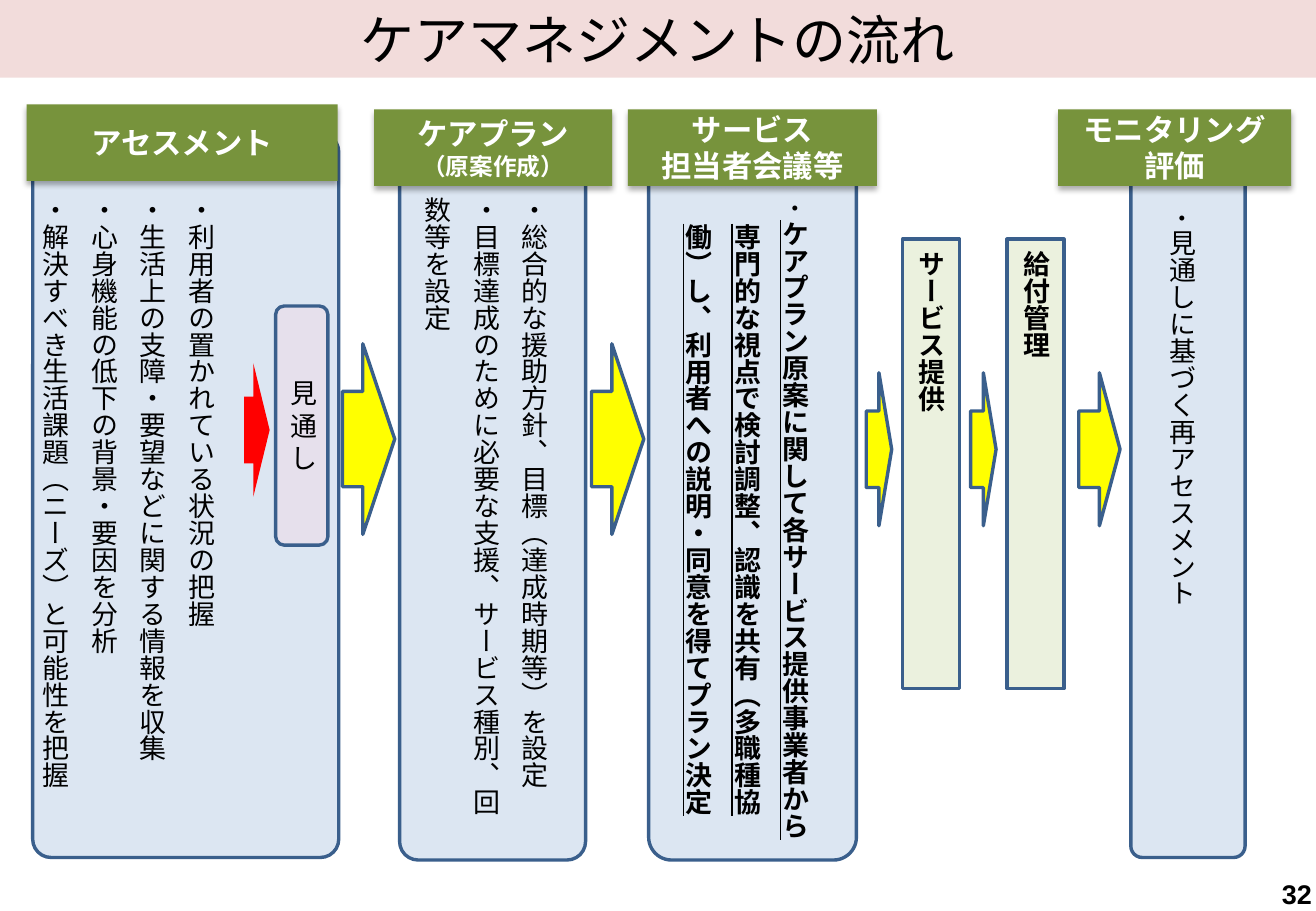
from dataclasses import dataclass
from typing import Optional

from lxml import etree
from pptx import Presentation
from pptx import util as u
from pptx.dml.color import RGBColor
from pptx.enum import shapes, text
from pptx.oxml import ns

GOTHIC, LATIN = "Noto Sans CJK JP", "Arial"
BLACK = RGBColor(0x00, 0x00, 0x00)
WHITE = RGBColor(0xFF, 0xFF, 0xFF)
PINK = RGBColor(0xF2, 0xDC, 0xDB)
PALE_BLUE = RGBColor(0xDC, 0xE6, 0xF2)
PALE_GREEN = RGBColor(0xEB, 0xF1, 0xDE)
LILAC = RGBColor(0xE6, 0xE0, 0xEC)
GREEN = RGBColor(0x77, 0x93, 0x3C)
YELLOW = RGBColor(0xFF, 0xFF, 0x00)
RED = RGBColor(0xFF, 0x00, 0x00)
NAVY = RGBColor(0x3A, 0x5F, 0x8C)

RECT = shapes.MSO_SHAPE.RECTANGLE
ROUND = shapes.MSO_SHAPE.ROUNDED_RECTANGLE
ARROW = shapes.MSO_SHAPE.RIGHT_ARROW
LEFT, CENTER, RIGHT = text.PP_ALIGN.LEFT, text.PP_ALIGN.CENTER, text.PP_ALIGN.RIGHT
MIDDLE, BOTTOM = text.MSO_ANCHOR.MIDDLE, text.MSO_ANCHOR.BOTTOM


@dataclass
class Box:
    left: float
    top: float
    width: float
    height: float


@dataclass
class Run:
    words: str
    size: float = 16
    bold: bool = False
    underline: bool = False
    color: RGBColor = BLACK
    font: str = GOTHIC


@dataclass
class Line:
    runs: list[Run]
    indent: float = 0


@dataclass
class Stage:
    panel: Box
    corner: float
    header: Box
    heading: list[Run]
    body: Box
    lines: list[Line]
    placeholder: int
    spacing: float = 1.5
    anchor: text.MSO_ANCHOR = MIDDLE


def heading(words: str, size: float = 18) -> Run:
    return Run(words, size, bold=True, color=WHITE)


def item(words: str) -> Line:
    return Line([Run(words)])


def agreed(words: str) -> Run:
    return Run(words, bold=True, underline=True)


def place(shape, box: Box) -> None:
    shape.left, shape.top = u.Pt(box.left), u.Pt(box.top)
    shape.width, shape.height = u.Pt(box.width), u.Pt(box.height)


def write(shape, lines: list[Line], align=CENTER, anchor=MIDDLE,
          vertical: bool = False, spacing: float = 1.0) -> None:
    frame = shape.text_frame
    frame.word_wrap = True
    frame.auto_size = text.MSO_AUTO_SIZE.NONE
    frame.vertical_anchor = anchor
    if vertical:
        frame._txBody.bodyPr.set("vert", "eaVert")
    for number, line in enumerate(lines):
        paragraph = frame.add_paragraph() if number else frame.paragraphs[0]
        paragraph.alignment = align
        paragraph.line_spacing = spacing
        paragraph.space_before = u.Pt(0)
        properties = paragraph._p.get_or_add_pPr()
        properties.set("marL", str(u.Pt(line.indent)))
        properties.set("indent", "0")
        etree.SubElement(properties, ns.qn("a:buNone"))
        for part in line.runs:
            run = paragraph.add_run()
            run.text = part.words
            font = run.font
            font.size, font.bold, font.underline = u.Pt(part.size), part.bold, part.underline
            font.color.rgb, font.name = part.color, part.font
            east_asian = etree.SubElement(run._r.get_or_add_rPr(), ns.qn("a:ea"))
            east_asian.set("typeface", part.font)


def draw(slide, kind, box: Box, fill: RGBColor, line: Optional[RGBColor] = NAVY,
         adjust: tuple[float, ...] = ()):
    shape = slide.shapes.add_shape(kind, *(u.Pt(v) for v in (box.left, box.top, box.width, box.height)))
    shape.shadow.inherit = False
    shape.fill.solid()
    shape.fill.fore_color.rgb = fill
    if line is None:
        shape.line.fill.background()
    else:
        shape.line.color.rgb = line
        shape.line.width = u.Pt(2)
    for number, value in enumerate(adjust):
        shape.adjustments[number] = value
    return shape


def drop_shadow(shape) -> None:
    effects = shape.element.spPr.find(ns.qn("a:effectLst"))
    shadow = etree.SubElement(effects, ns.qn("a:outerShdw"), blurRad=str(u.Pt(3.5)),
                              dist=str(u.Pt(2.2)), dir="5400000", rotWithShape="0")
    color = etree.SubElement(shadow, ns.qn("a:srgbClr"), val="000000")
    etree.SubElement(color, ns.qn("a:alpha"), val="32000")


def draw_stage(slide, stage: Stage) -> None:
    draw(slide, ROUND, stage.panel, PALE_BLUE, adjust=(stage.corner,))
    header = draw(slide, RECT, stage.header, GREEN, None)
    drop_shadow(header)
    write(header, [Line([run]) for run in stage.heading])
    body = slide.placeholders[stage.placeholder]
    slide.shapes.element.append(body.element)  # bring in front of its panel
    place(body, stage.body)
    write(body, stage.lines, LEFT, stage.anchor, True, stage.spacing)


STAGES = [
    Stage(Box(19.4, 79.2, 181.4, 429.1), 0.06, Box(15.8, 61.9, 184.3, 45.4),
          [heading("アセスメント")], Box(15.8, 113, 131, 380.2),
          [item("・利用者の置かれている状況の把握"),
           item("・生活上の支障・要望などに関する情報を収集"),
           item("・心身機能の低下の背景・要因を分析"),
           item("・解決すべき生活課題（ニーズ）と可能性を把握")], 1, anchor=BOTTOM),
    Stage(Box(236.9, 85, 110.2, 424.8), 0.1, Box(221.8, 64.8, 141.1, 45.4),
          [heading("ケアプラン"), heading("（原案作成）", 14)], Box(241.9, 113, 101.5, 380.2),
          [item("・総合的な援助方針、目標（達成時期等）を設定"),
           item("・目標達成のために必要な支援、サービス種別、回数等を設定")], 2),
    Stage(Box(384.5, 85, 123.1, 424.8), 0.11, Box(372.2, 64.8, 147.6, 45.4),
          [heading("サービス"), heading("担当者会議等")], Box(396.7, 113, 101.5, 396.7),
          [Line([Run("・", 14), agreed("ケアプラン原案に関して各サービス提供事業者から")]),
           Line([agreed("専門的な視点で検討調整、認識を共有（多職種協")], 16),
           Line([agreed("働）し、利用者への説明・同意を得てプラン決定")], 16)], 3),
    Stage(Box(670.3, 83.5, 67.7, 424.8), 0.1, Box(627.1, 64.8, 138.2, 45.4),
          [heading("モニタリング"), heading("評価")], Box(684, 118.8, 33.8, 385.2),
          [Line([Run("・", 14), Run("見通しに基づく再アセスメント")])], 4, spacing=1.0),
]
SERVICES = {"サービス提供": 535, "給付管理": 596.9}
LARGE_ARROWS = (203, 350.6)
SMALL_ARROWS = ((513.4, 15.1), (575.3, 15.1), (639.4, 24.5))


def main() -> None:
    deck = Presentation()
    deck.slide_width, deck.slide_height = u.Pt(780), u.Pt(540)
    slide = deck.slides.add_slide(deck.slide_layouts[4])

    # Title band
    title = slide.shapes.title
    place(title, Box(0, 0, 780, 46))
    title.fill.solid()
    title.fill.fore_color.rgb = PINK
    write(title, [Line([Run("ケアマネジメントの流れ", 32, font=LATIN)])])

    # Stages with their headers and lists
    for stage in STAGES:
        draw_stage(slide, stage)

    # Outlook drawn from the assessment
    draw(slide, ARROW, Box(144.7, 215.3, 15.1, 79.2), RED, None, (0.5, 0.64))
    outlook = draw(slide, ROUND, Box(163.4, 181.4, 31, 141.8), LILAC)
    write(outlook, [item("見通し")])

    # Service delivery and benefit management
    for words, left in SERVICES.items():
        service = draw(slide, RECT, Box(left, 141.8, 33.8, 266.4), PALE_GREEN)
        write(service, [Line([Run(words, bold=True)])], LEFT, vertical=True)

    # Arrows between the stages
    for left in LARGE_ARROWS:
        draw(slide, ARROW, Box(left, 203.8, 31, 113), YELLOW, adjust=(0.5, 0.61))
    for left, width in SMALL_ARROWS:
        draw(slide, ARROW, Box(left, 221, width, 90.7), YELLOW)

    # Page number
    page = slide.shapes.add_textbox(u.Pt(700), u.Pt(520), u.Pt(77.6), u.Pt(20))
    frame = page.text_frame
    frame.margin_left = frame.margin_right = frame.margin_top = frame.margin_bottom = u.Pt(0)
    write(page, [Line([Run("32", bold=True, font=LATIN)])], RIGHT)

    deck.save("out.pptx")


if __name__ == "__main__":
    main()
